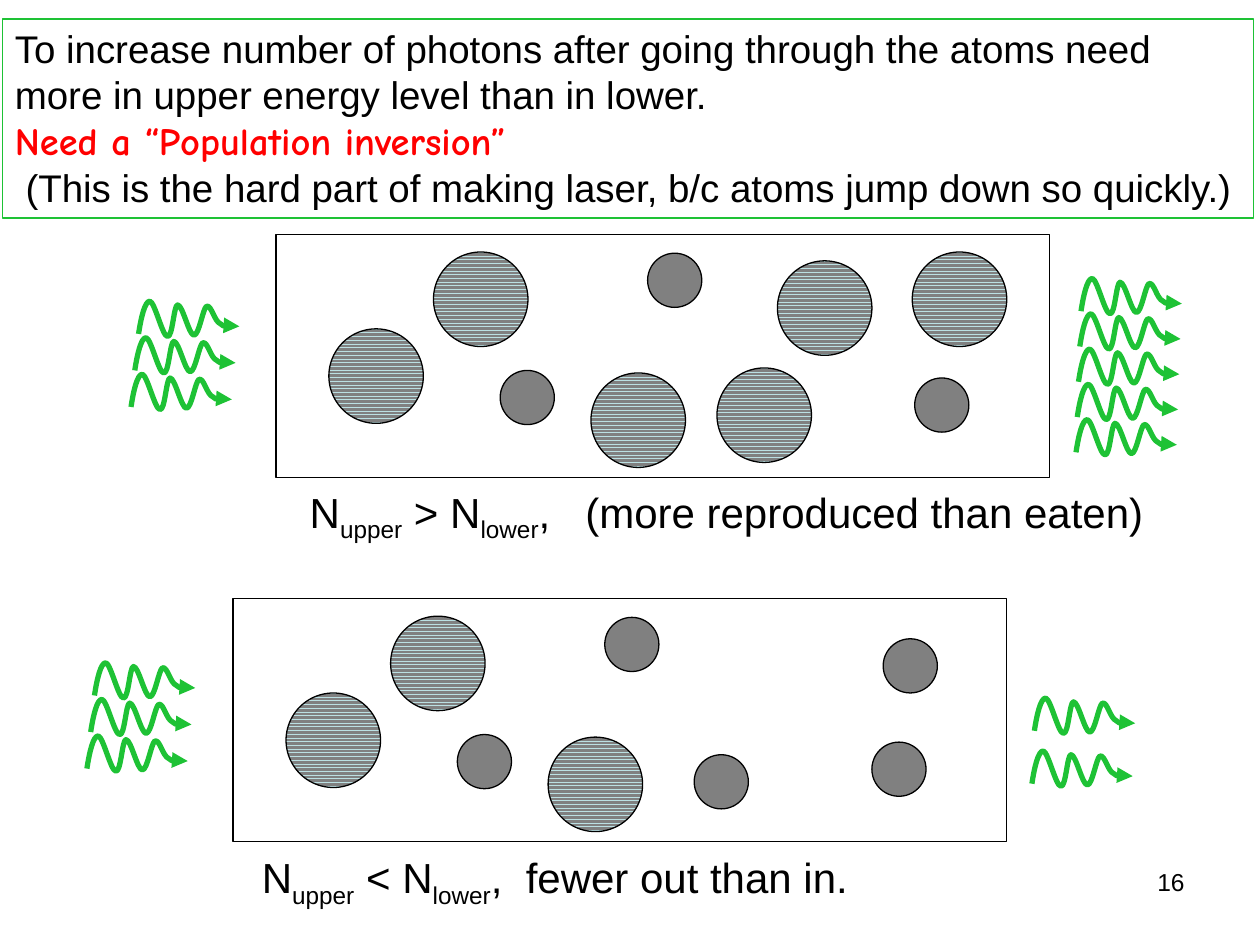
from dataclasses import dataclass

import lxml.etree
import pptx
import pptx.dml.color
import pptx.enum.dml
import pptx.enum.shapes
import pptx.enum.text
import pptx.oxml.ns
import pptx.util

Inches = pptx.util.Inches
Point = tuple[float, float]

COLORS = {
    "green": "1EC235",
    "black": "000000",
    "red": "FF0000",
    "gray": "808080",
    "pale": "BBE0E3",
}
BOX_W, BOX_H = 6.14, 1.93
UPPER_D, LOWER_D = 0.75, 0.43

# Start of the photon wave, then three points for each Bézier curve
WAVE = [
    (0, 0.26),
    (0.02, 0.13), (0.05, 0), (0.09, 0),
    (0.13, 0.01), (0.19, 0.28), (0.23, 0.28),
    (0.27, 0.29), (0.28, 0.03), (0.31, 0.03),
    (0.35, 0.03), (0.4, 0.27), (0.44, 0.27),
    (0.48, 0.27), (0.51, 0.06), (0.54, 0.04),
    (0.58, 0.03), (0.6, 0.16), (0.65, 0.18),
    (0.69, 0.21), (0.77, 0.19), (0.8, 0.2),
]

# Atoms found in both panels, measured from the corner of the box
SHARED_UPPER = [(1.25, 0.14), (2.5, 1.1), (0.42, 0.75)]
SHARED_LOWER = [(1.78, 1.08), (2.95, 0.15), (5.07, 1.14)]


@dataclass
class Run:
    text: str
    fmt: dict
    color: str = "black"
    subscript: bool = False


@dataclass
class Beam:
    start: Point
    step: Point
    count: int


@dataclass
class Panel:
    corner: Point
    upper: list[Point]
    lower: list[Point]
    beams: list[Beam]
    caption_at: tuple[float, float, float, float]
    relation: str
    remark: str


PANELS = [
    Panel((2.19, 1.86),
          SHARED_UPPER + [(3.98, 0.21), (5.05, 0.14), (3.5, 1.06)],
          SHARED_LOWER,
          [Beam((1.1, 2.39), (-0.03, 0.29), 3), Beam((8.58, 2.21), (-0.01, 0.28), 5)],
          (2.36, 3.81, 7.05, 0.5), ">", ",   (more reproduced than eaten)"),
    Panel((1.85, 4.75),
          SHARED_UPPER,
          SHARED_LOWER + [(3.66, 1.24), (5.16, 0.32)],
          [Beam((0.75, 5.26), (-0.03, 0.29), 3), Beam((8.21, 5.54), (-0.02, 0.42), 2)],
          (1.98, 6.71, 5.09, 0.5), "<", ",  fewer out than in."),
]


def rgb(name: str) -> pptx.dml.color.RGBColor:
    return pptx.dml.color.RGBColor.from_string(COLORS[name])


def outline(sp, color: str, width: float) -> None:
    sp.shadow.inherit = False
    sp.line.color.rgb = rgb(color)
    sp.line.width = pptx.util.Pt(width)


def add_text(s, at, paragraphs: list[list[Run]], align="LEFT"):
    sp = s.shapes.add_textbox(*map(Inches, at))
    tf = sp.text_frame
    tf.word_wrap = True
    for i, runs in enumerate(paragraphs):
        p = tf.paragraphs[0] if i == 0 else tf.add_paragraph()
        p.alignment = pptx.enum.text.PP_ALIGN[align]
        for run in runs:
            r = p.add_run()
            r.text = run.text
            for key, value in run.fmt.items():
                setattr(r.font, key, value)
            r.font.color.rgb = rgb(run.color)
            if run.subscript:
                r.font._element.set("baseline", "-25000")
    return sp


def add_atom(s, corner: Point, offset: Point, upper: bool) -> None:
    d = Inches(UPPER_D if upper else LOWER_D)
    left, top = (Inches(c + o) for c, o in zip(corner, offset))
    sp = s.shapes.add_shape(pptx.enum.shapes.MSO_SHAPE.OVAL, left, top, d, d)
    if upper:
        sp.fill.patterned()
        sp.fill.pattern = pptx.enum.dml.MSO_PATTERN.ZIG_ZAG
        sp.fill.fore_color.rgb = rgb("pale")
        sp.fill.back_color.rgb = rgb("gray")
    else:
        sp.fill.solid()
        sp.fill.fore_color.rgb = rgb("gray")
    outline(sp, "black", 0.75)


def add_photon(s, x: float, y: float) -> None:
    points = [(Inches(x + dx), Inches(y + dy)) for dx, dy in WAVE]
    builder = s.shapes.build_freeform(*points[0])
    builder.add_line_segments(points[1:], close=False)
    sp = builder.convert_to_shape()
    sp.fill.background()
    outline(sp, "green", 3)
    # Turn each three line segments into one cubic curve
    qn = pptx.oxml.ns.qn
    segments = list(sp._element.iter(qn("a:lnTo")))
    for i in range(0, len(segments), 3):
        curve = lxml.etree.Element(qn("a:cubicBezTo"))
        segments[i].addprevious(curve)
        for segment in segments[i:i + 3]:
            curve.append(segment[0])
            segment.getparent().remove(segment)
    # Arrowhead
    lxml.etree.SubElement(sp.line._get_or_add_ln(), qn("a:tailEnd"), type="triangle")


def add_panel(s, panel: Panel) -> None:
    box = s.shapes.add_shape(pptx.enum.shapes.MSO_SHAPE.RECTANGLE,
                             *map(Inches, (*panel.corner, BOX_W, BOX_H)))
    box.fill.background()
    outline(box, "black", 0.75)
    for offset in panel.upper:
        add_atom(s, panel.corner, offset, True)
    for offset in panel.lower:
        add_atom(s, panel.corner, offset, False)
    for beam in panel.beams:
        for i in range(beam.count):
            add_photon(s, *(c + i * d for c, d in zip(beam.start, beam.step)))
    fmt = {"name": "Arial", "size": pptx.util.Pt(24)}
    add_text(s, panel.caption_at, [[
        Run("N", fmt), Run("upper", fmt, subscript=True),
        Run(f" {panel.relation} N", fmt), Run("lower", fmt, subscript=True),
        Run(panel.remark, fmt),
    ]])


def main() -> None:
    prs = pptx.Presentation()
    prs.slide_width, prs.slide_height = Inches(10), Inches(7.5)
    s = prs.slides.add_slide(prs.slide_layouts[6])

    # Heading
    plain = {"name": "Arial", "size": pptx.util.Pt(22)}
    accent = plain | {"name": "Comic Neue", "bold": True}
    heading = add_text(s, (0.02, 0.15, 9.93, 1.58), [
        [Run("To increase number of photons after going through the atoms need", plain)],
        [Run("more in upper energy level than in lower.", plain)],
        [Run("Need a “Population inversion”", accent, "red")],
        [Run(" (This is the hard part of making laser, b/c atoms jump down so quickly.)", plain)],
    ])
    outline(heading, "green", 0.75)

    # Atoms and photons
    for panel in PANELS:
        add_panel(s, panel)

    # Slide number
    number = {"name": "Arial", "size": pptx.util.Pt(14)}
    add_text(s, (7.17, 6.83, 2.33, 0.52), [[Run("16", number)]], "RIGHT")
    prs.save("out.pptx")


if __name__ == "__main__":
    main()
